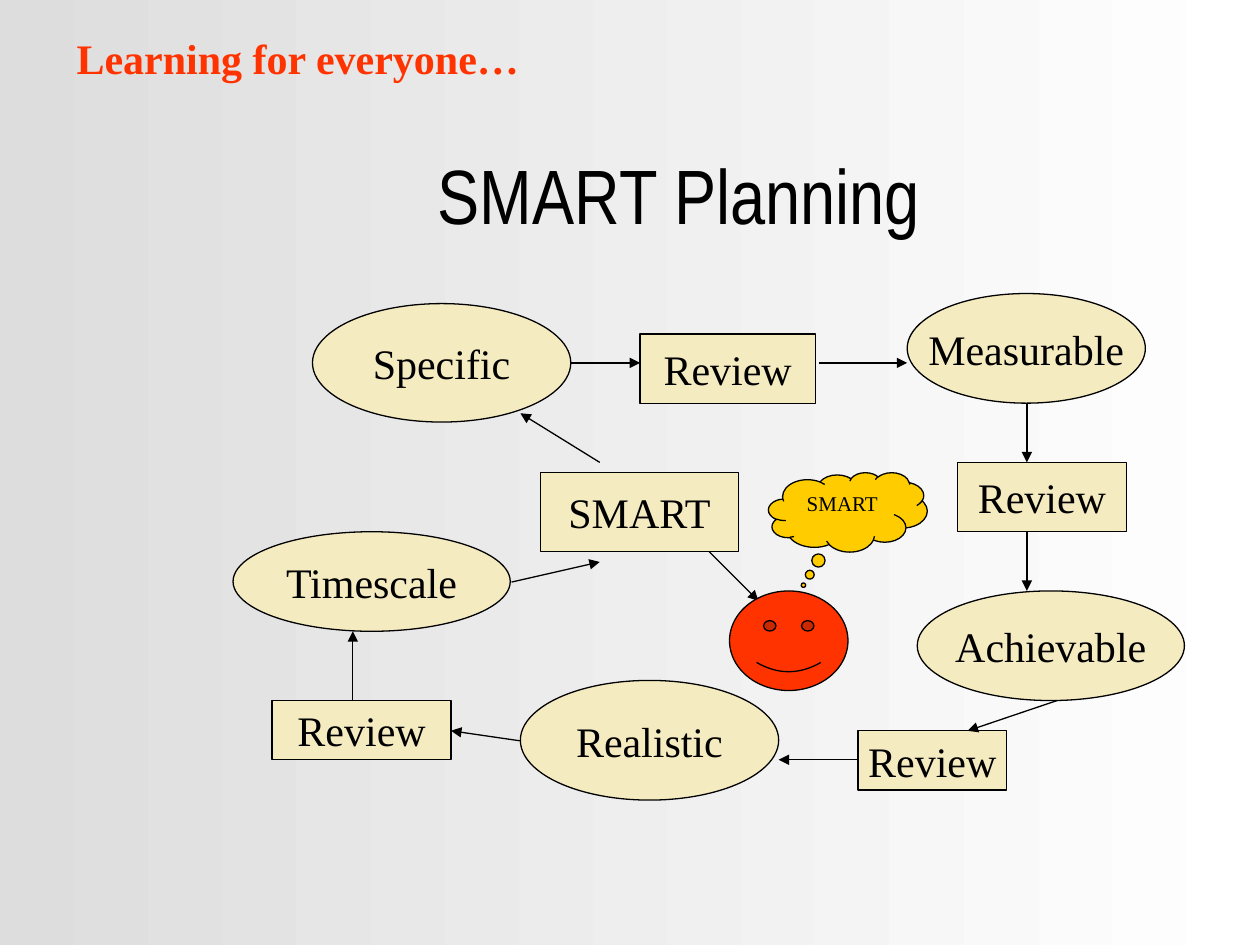
from dataclasses import dataclass

from lxml.etree import SubElement
from pptx import Presentation
from pptx.dml.color import RGBColor
from pptx.enum.shapes import MSO_CONNECTOR, MSO_SHAPE
from pptx.enum.text import MSO_ANCHOR, MSO_AUTO_SIZE, PP_ALIGN
from pptx.oxml.ns import qn
from pptx.util import Inches, Pt


@dataclass(frozen=True)
class Theme:
    ink: str = "000000"
    cream: str = "F5EBC1"
    red: str = "FF3300"
    gold: str = "FFCC00"
    back_left: str = "DDDDDD"
    back_right: str = "FFFFFF"
    serif: str = "Times New Roman"
    narrow: str = "Arial Narrow"
    title_size: int = 44
    label_size: int = 24
    thought_size: int = 12
    line_width: float = 0.75


THEME = Theme()
OVAL, BOX = MSO_SHAPE.OVAL, MSO_SHAPE.RECTANGLE

# Steps of the cycle: outline, label, (left, top, width, height)
STEPS = [
    (BOX, "SMART", (4.29, 3.75, 1.57, 0.63)),
    (OVAL, "Specific", (2.48, 2.41, 2.05, 0.94)),
    (BOX, "Review", (5.08, 2.65, 1.39, 0.55)),
    (OVAL, "Measurable", (7.2, 2.33, 1.89, 0.87)),
    (BOX, "Review", (7.6, 3.67, 1.34, 0.55)),
    (OVAL, "Achievable", (7.28, 4.69, 2.12, 0.87)),
    (BOX, "Review", (6.81, 5.8, 1.18, 0.47)),
    (OVAL, "Realistic", (4.13, 5.4, 2.05, 0.95)),
    (BOX, "Review", (2.16, 5.56, 1.42, 0.47)),
    (OVAL, "Timescale", (1.85, 4.22, 2.2, 0.79)),
]

# Arrows in cycle order, then the one to the face: start, end
ARROWS = [
    ((4.76, 3.67), (4.13, 3.28)),
    ((4.53, 2.88), (5.08, 2.88)),
    ((6.5, 2.88), (7.2, 2.88)),
    ((8.15, 3.2), (8.15, 3.67)),
    ((8.15, 4.22), (8.15, 4.69)),
    ((8.39, 5.56), (7.68, 5.8)),
    ((6.81, 6.03), (6.18, 6.03)),
    ((4.13, 5.88), (3.58, 5.8)),
    ((2.8, 5.56), (2.8, 5.01)),
    ((4.06, 4.62), (4.76, 4.46)),
    ((5.63, 4.38), (6.02, 4.77)),
]


def color(value):
    return RGBColor.from_string(value)


def write(frame, text, size, font=THEME.serif, ink=THEME.ink,
          align=PP_ALIGN.CENTER, bold=False):
    frame.text = text
    paragraph = frame.paragraphs[0]
    paragraph.alignment = align
    style = paragraph.runs[0].font
    style.name, style.size, style.bold = font, Pt(size), bold
    style.color.rgb = color(ink)


def paint_background(slide):
    fill = slide.background.fill
    fill.gradient()
    fill.gradient_angle = 0
    for stop, shade in zip(fill.gradient_stops, (THEME.back_left, THEME.back_right)):
        stop.color.rgb = color(shade)


def add_heading(slide):
    # Strapline
    strapline = slide.shapes.add_textbox(*map(Inches, (0.51, 0.21, 3.94, 0.5)))
    strapline.text_frame.word_wrap = True
    write(strapline.text_frame, "Learning for everyone…", THEME.label_size,
          ink=THEME.red, align=PP_ALIGN.LEFT, bold=True)

    # Title
    title = slide.shapes.title
    title.left, title.top, title.width, title.height = map(
        Inches, (1.14, 1.15, 8.5, 0.78))
    title.text_frame.auto_size = MSO_AUTO_SIZE.NONE
    title.text_frame.vertical_anchor = MSO_ANCHOR.MIDDLE
    write(title.text_frame, "SMART Planning", THEME.title_size, THEME.narrow)


def add_outlined(slide, outline, bounds, fill):
    shape = slide.shapes.add_shape(outline, *map(Inches, bounds))
    shape.shadow.inherit = False
    shape.fill.solid()
    shape.fill.fore_color.rgb = color(fill)
    shape.line.color.rgb = color(THEME.ink)
    shape.line.width = Pt(THEME.line_width)
    return shape


def add_step(slide, outline, label, bounds):
    frame = add_outlined(slide, outline, bounds, THEME.cream).text_frame
    frame.word_wrap = False
    frame.vertical_anchor = MSO_ANCHOR.MIDDLE
    write(frame, label, THEME.label_size)


def add_arrow(slide, start, end):
    arrow = slide.shapes.add_connector(
        MSO_CONNECTOR.STRAIGHT, *map(Inches, start + end))
    arrow.line.color.rgb = color(THEME.ink)
    arrow.line.width = Pt(THEME.line_width)
    properties = arrow.line._get_or_add_ln()
    SubElement(properties, qn("a:tailEnd"), type="triangle")
    SubElement(properties.getparent(), qn("a:effectLst"))


def add_thinker(slide):
    face = add_outlined(slide, MSO_SHAPE.SMILEY_FACE,
                        (5.79, 4.69, 0.94, 0.79), THEME.red)
    face.adjustments[0] = 0.05

    thought = add_outlined(slide, MSO_SHAPE.CLOUD_CALLOUT,
                           (6.1, 3.75, 1.26, 0.63), THEME.gold)
    thought.adjustments[0] = -0.28
    thought.adjustments[1] = 0.92
    thought.text_frame.word_wrap = True
    thought.text_frame.vertical_anchor = MSO_ANCHOR.TOP
    write(thought.text_frame, "SMART", THEME.thought_size)


def main():
    deck = Presentation()
    deck.slide_width, deck.slide_height = Inches(10), Inches(7.5)
    slide = deck.slides.add_slide(deck.slide_layouts[5])

    paint_background(slide)
    add_heading(slide)
    for step in STEPS:
        add_step(slide, *step)
    for start, end in ARROWS:
        add_arrow(slide, start, end)
    add_thinker(slide)

    deck.save("out.pptx")


if __name__ == "__main__":
    main()
